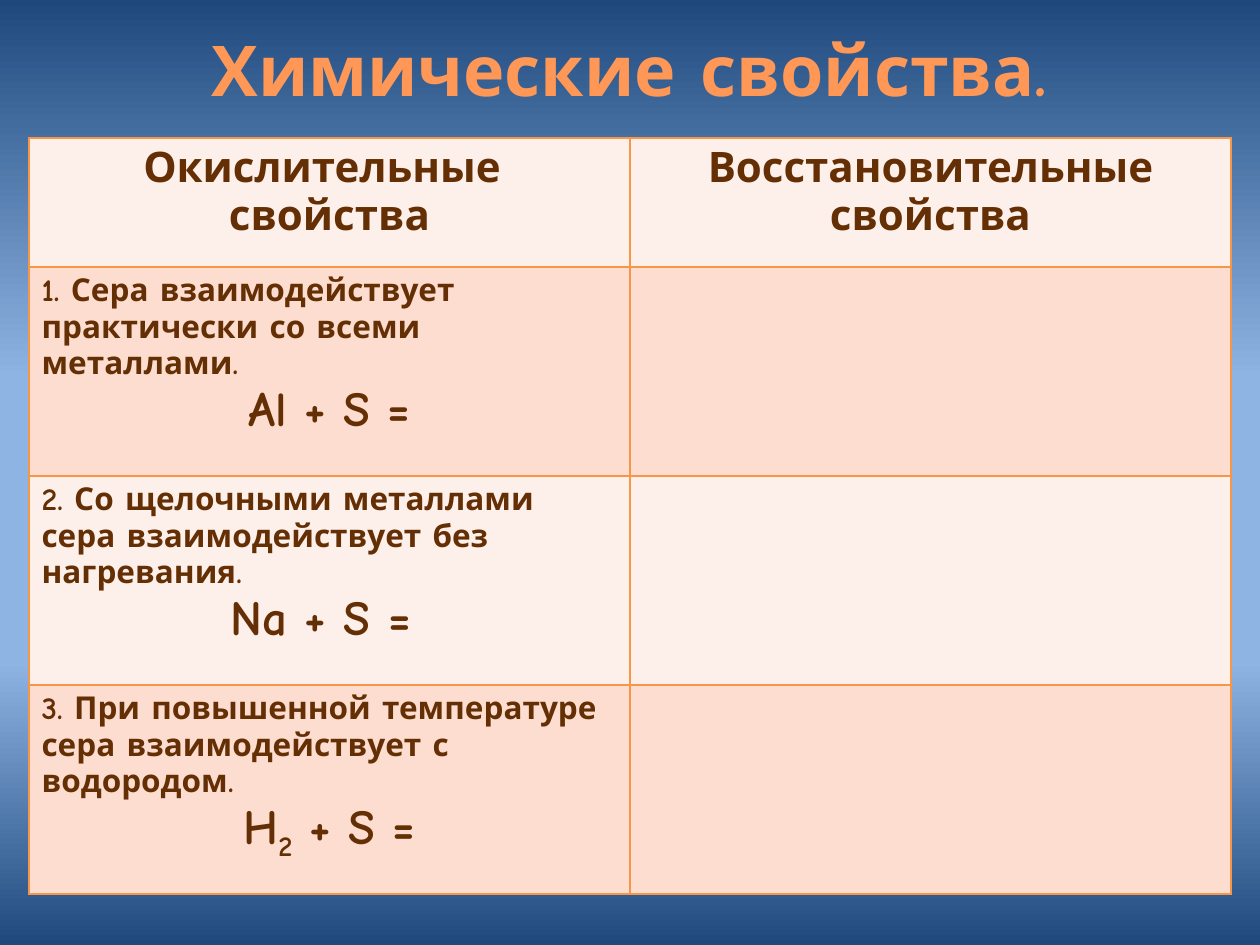
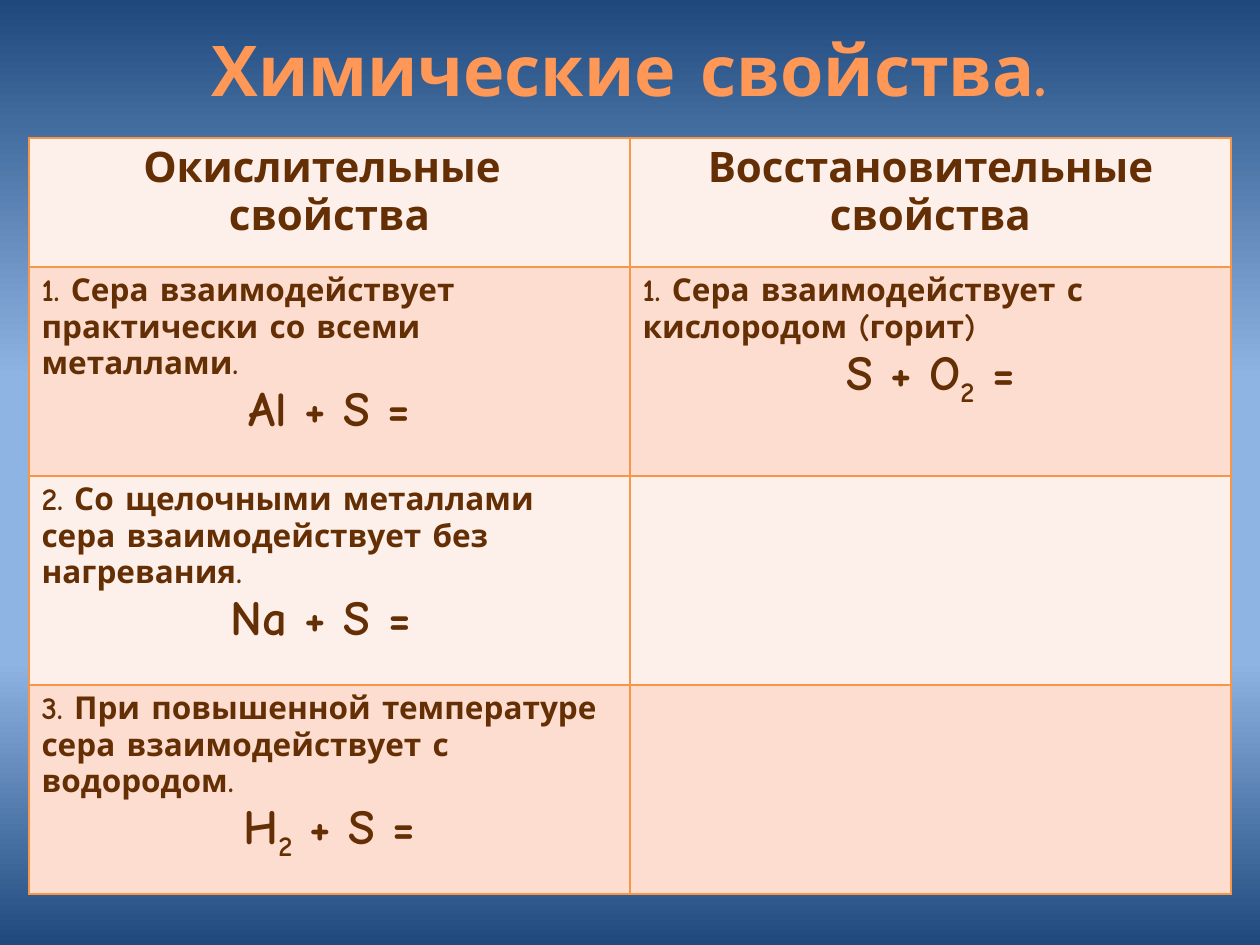
from lxml import etree
from pptx import Presentation
from pptx import util as u
from pptx.dml.color import RGBColor
from pptx.enum import text as t
from pptx.oxml import ns

SCALE = 914400 / 126
FONT = "Comic Neue"
ORANGE = RGBColor(0xFF, 0x98, 0x56)
BROWN = RGBColor(0x64, 0x2F, 0x04)
BORDER = RGBColor(0xF7, 0x96, 0x46)
ROW_FILLS = (RGBColor(0xFD, 0xEF, 0xE9), RGBColor(0xFC, 0xDD, 0xCF))
NAVY = RGBColor(0x1F, 0x49, 0x7D)
SKY = RGBColor(0x8E, 0xB4, 0xE3)
BACKGROUND_STOPS = ((0, NAVY), (40, SKY), (70, SKY), (100, NAVY))

TITLE = "Химические свойства."
HEADERS = (("Окислительные ", "свойства"), ("Восстановительные свойства",))
OXIDIZING = (
    ("1. Сера взаимодействует практически со всеми металлами.", "Al + S ="),
    ("2. Со щелочными металлами сера взаимодействует без нагревания.", "Na + S = "),
    ("3. При повышенной температуре сера взаимодействует с водородом.", "H_2_ + S ="),
)
REDUCING = (("1. Сера взаимодействует с кислородом (горит)", "S + O_2_ ="),)


def px(length):
    return u.Emu(round(length * SCALE))


def add_element(parent, name, **attributes):
    return etree.SubElement(parent, ns.qn(name), **attributes)


def write(frame, text, size, color=BROWN, align=t.PP_ALIGN.LEFT, first=False):
    paragraph = frame.paragraphs[0] if first else frame.add_paragraph()
    paragraph.alignment = align
    for index, part in enumerate(text.split("_")):
        run = paragraph.add_run()
        run.text = part
        run.font.name = FONT
        run.font.size = u.Pt(size)
        run.font.bold = True
        run.font.color.rgb = color
        if index % 2:
            run.font._element.set("baseline", "-25000")


class Deck:
    def __init__(self):
        self.presentation = Presentation()
        self.presentation.slide_width = px(1260)
        self.presentation.slide_height = px(945)
        self.slide = None

    def add_slide(self):
        self.slide = self.presentation.slides.add_slide(self.presentation.slide_layouts[6])
        fill = self.slide.background.fill
        fill.gradient()
        fill.gradient_angle = 270
        stops = self.slide.element.find(".//" + ns.qn("a:gsLst"))
        for stop in list(stops):
            stops.remove(stop)
        for position, color in BACKGROUND_STOPS:
            stop = add_element(stops, "a:gs", pos=str(position * 1000))
            add_element(stop, "a:srgbClr", val=str(color))

    def title(self, text):
        shape = self.slide.shapes.add_textbox(px(29), px(20), px(1201), px(97))
        frame = shape.text_frame
        frame.word_wrap = True
        frame.auto_size = t.MSO_AUTO_SIZE.SHAPE_TO_FIT_TEXT
        write(frame, text, 40, ORANGE, t.PP_ALIGN.CENTER, first=True)

    def borders(self, cell):
        properties = cell._tc.get_or_add_tcPr()
        for index, side in enumerate("LRTB"):
            line = etree.Element(ns.qn("a:ln" + side), w=str(u.Pt(1)))
            add_element(add_element(line, "a:solidFill"), "a:srgbClr", val=str(BORDER))
            properties.insert(index, line)

    def property_table(self, oxidizing, reducing):
        heights = (129, 209, 209, 209)
        table = self.slide.shapes.add_table(
            len(heights), 2, px(29), px(138), px(1202), px(sum(heights))).table
        for column in table.columns:
            column.width = px(601)
        for row_index, height in enumerate(heights):
            table.rows[row_index].height = px(height)
            for column_index in range(2):
                cell = table.cell(row_index, column_index)
                cell.fill.solid()
                cell.fill.fore_color.rgb = ROW_FILLS[row_index % 2]
                self.borders(cell)
        for column_index, lines in enumerate(HEADERS):
            frame = table.cell(0, column_index).text_frame
            for index, line in enumerate(lines):
                write(frame, line, 24, align=t.PP_ALIGN.CENTER, first=index == 0)
        for column_index, reactions in enumerate((oxidizing, reducing)):
            for row_index, (rule, equation) in enumerate(reactions, 1):
                frame = table.cell(row_index, column_index).text_frame
                write(frame, rule, 18, first=True)
                write(frame, equation, 28, align=t.PP_ALIGN.CENTER)


def main():
    deck = Deck()
    for reducing in ((), REDUCING):
        deck.add_slide()
        deck.title(TITLE)
        deck.property_table(OXIDIZING, reducing)
    deck.presentation.save("out.pptx")


if __name__ == "__main__":
    main()
